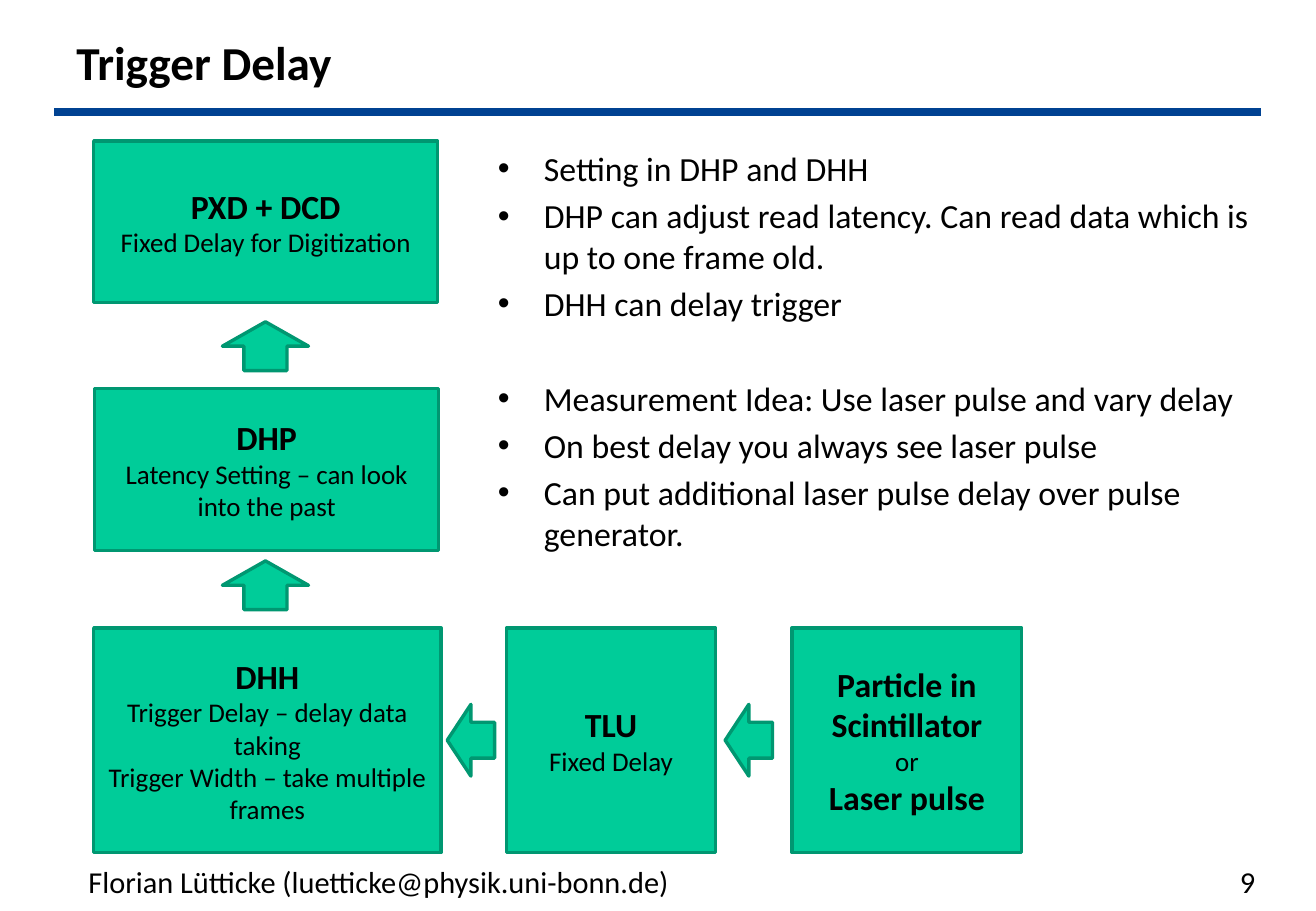
from lxml.etree import SubElement
from pptx import Presentation
from pptx.dml.color import RGBColor
from pptx.enum.shapes import MSO_CONNECTOR, MSO_SHAPE
from pptx.enum.text import MSO_ANCHOR, PP_ALIGN
from pptx.oxml.ns import qn
from pptx.util import Cm, Pt

FONT = "Calibri"
BLACK = RGBColor(0x00, 0x00, 0x00)
BLUE = RGBColor(0x00, 0x42, 0x92)
GREEN = RGBColor(0x00, 0xCC, 0x99)
DARK_GREEN = RGBColor(0x00, 0x97, 0x71)

HEAD = dict(size=20, bold=True)
DETAIL = dict(size=16)

# Stages of the trigger chain: left, top, width, height in cm, then lines of text
STAGES = [
    (1.96, 2.95, 7.19, 3.38, [("PXD + DCD", HEAD), ("Fixed Delay for Digitization", DETAIL)]),
    (1.98, 8.13, 7.19, 3.38, [("DHP", HEAD), ("Latency Setting – can look into the past", DETAIL)]),
    (1.96, 13.13, 7.26, 4.7, [("DHH", HEAD), ("Trigger Delay – delay data taking", DETAIL),
                              ("Trigger Width – take multiple frames", DETAIL)]),
    (10.59, 13.13, 4.37, 4.7, [("TLU", HEAD), ("Fixed Delay", DETAIL)]),
    (16.56, 13.13, 4.8, 4.7, [("Particle in Scintillator", HEAD), ("or", DETAIL),
                              ("Laser pulse", HEAD)]),
]
UP_ARROW_TOPS = [6.73, 11.73]
LEFT_ARROW_LEFTS = [9.35, 15.16]

BULLET_GROUPS = [
    ["Setting in DHP and DHH",
     "DHP can adjust read latency. Can read data which is up to one frame old.",
     "DHH can delay trigger"],
    ["Measurement Idea: Use laser pulse and vary delay",
     "On best delay you always see laser pulse",
     "Can put additional laser pulse delay over pulse generator."],
]


def add_text(tf, text, size=20, bold=False, align=PP_ALIGN.LEFT, before=0, bullet=False):
    """Add one paragraph, using the empty first one if there is one."""
    p = tf.paragraphs[0] if not tf.paragraphs[0].runs else tf.add_paragraph()
    p.alignment = align
    if before:
        p.space_before = Pt(before)
    if bullet:
        pPr = p._p.get_or_add_pPr()
        pPr.set("marL", str(Cm(0.96)))
        pPr.set("indent", str(-Cm(0.96)))
        SubElement(pPr, qn("a:buFont")).set("typeface", "Arial")
        SubElement(pPr, qn("a:buChar")).set("char", "•")
    r = p.add_run()
    r.text = text
    r.font.name = FONT
    r.font.size = Pt(size)
    r.font.bold = bold
    r.font.color.rgb = BLACK


def add_frame(s, left, top, width, height, anchor=MSO_ANCHOR.TOP):
    tf = s.shapes.add_textbox(Cm(left), Cm(top), Cm(width), Cm(height)).text_frame
    tf.word_wrap = True
    tf.vertical_anchor = anchor
    return tf


def add_green_shape(s, kind, left, top, width, height):
    sp = s.shapes.add_shape(kind, Cm(left), Cm(top), Cm(width), Cm(height))
    sp.shadow.inherit = False
    sp.fill.solid()
    sp.fill.fore_color.rgb = GREEN
    sp.line.color.rgb = DARK_GREEN
    sp.line.width = Pt(2)
    return sp


def add_header(s, left, top, width):
    tf = add_frame(s, left + 0.21, top, width - 1.12, 1.7, MSO_ANCHOR.MIDDLE)
    add_text(tf, "Trigger Delay", size=28, bold=True)
    y = Cm(top + 1.91)
    rule = s.shapes.add_connector(MSO_CONNECTOR.STRAIGHT, Cm(left), y, Cm(left + width), y)
    rule.line.color.rgb = BLUE
    rule.line.width = Pt(4.5)
    SubElement(rule._element.spPr, qn("a:effectLst"))


def add_bullets(s, left, top, width, height):
    tf = add_frame(s, left, top, width, height)
    for g, group in enumerate(BULLET_GROUPS):
        for i, text in enumerate(group):
            before = 4 if i else 32 * g
            add_text(tf, text, before=before, bullet=True)


def add_stage(s, left, top, width, height, lines):
    sp = add_green_shape(s, MSO_SHAPE.RECTANGLE, left, top, width, height)
    tf = sp.text_frame
    tf.word_wrap = True
    tf.vertical_anchor = MSO_ANCHOR.MIDDLE
    for text, style in lines:
        add_text(tf, text, align=PP_ALIGN.CENTER, **style)


def add_trigger_chain(s):
    for stage in STAGES:
        add_stage(s, *stage)
    for top in UP_ARROW_TOPS:
        add_green_shape(s, MSO_SHAPE.UP_ARROW, 4.65, top, 1.8, 1.02)
    for left in LEFT_ARROW_LEFTS:
        add_green_shape(s, MSO_SHAPE.LEFT_ARROW, left, 14.73, 0.99, 1.5)


def add_footer(s, left, top, width, height):
    number_width = 5.74
    author = add_frame(s, left, top, 20.35, height)
    add_text(author, "Florian Lütticke (luetticke@physik.uni-bonn.de)", size=18)
    number = add_frame(s, left + width - number_width, top, number_width, height)
    add_text(number, "9", size=18, align=PP_ALIGN.RIGHT)


def main():
    prs = Presentation()
    prs.slide_width, prs.slide_height = Cm(27.51), Cm(19.05)
    s = prs.slides.add_slide(prs.slide_layouts[6])
    add_header(s, 1.14, 0.43, 25.23)
    add_bullets(s, 10.16, 2.97, 16.21, 9.55)
    add_trigger_chain(s)
    add_footer(s, 1.6, 17.93, 24.89, 0.71)
    prs.save("out.pptx")


if __name__ == "__main__":
    main()
